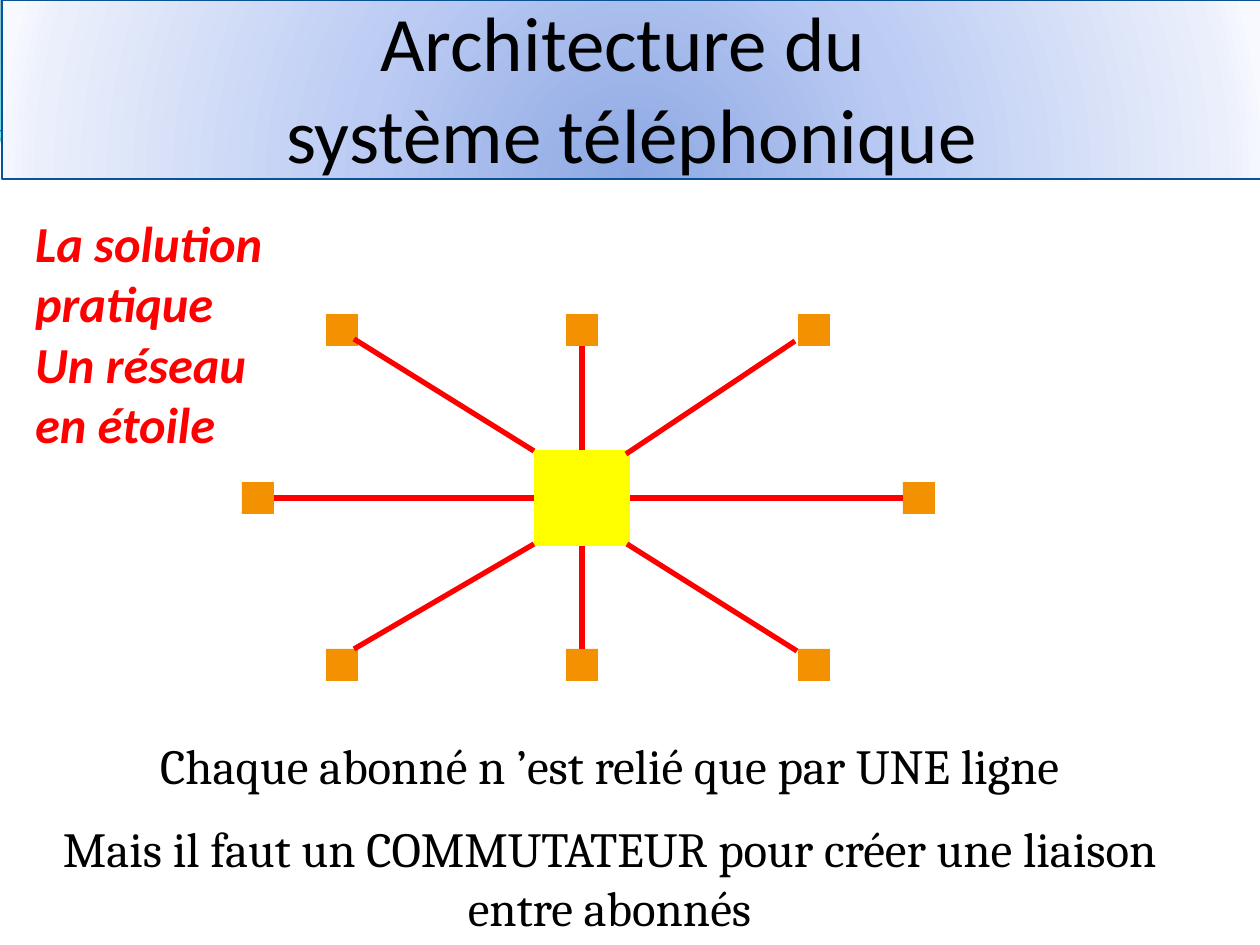
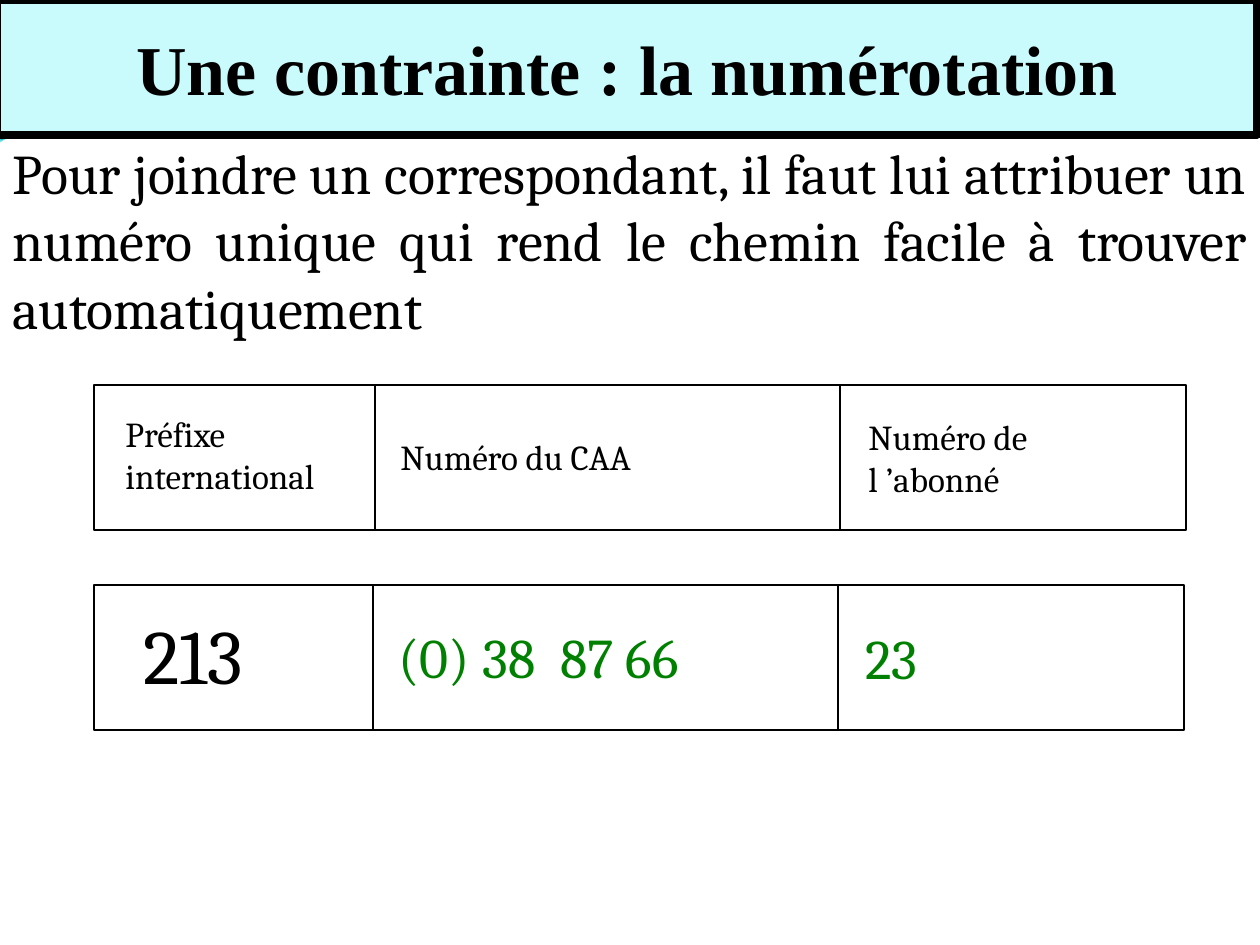
from pptx import Presentation
from pptx import oxml, util as u
from pptx.dml.color import RGBColor
from pptx.enum import shapes, text
from pptx.oxml import ns

PX = 914400 / 126
RECT = shapes.MSO_SHAPE.RECTANGLE
MID, LOW = text.MSO_ANCHOR.MIDDLE, text.MSO_ANCHOR.BOTTOM
LEFT, MIDDLE, JUST = text.PP_ALIGN.LEFT, text.PP_ALIGN.CENTER, text.PP_ALIGN.JUSTIFY
BLACK, RED, ORANGE, YELLOW, GREEN = "000000", "FF0000", "F49100", "FFFF00", "008000"
BODY = "Cambria"

DOWN = '<a:lin ang="5400000" scaled="1"/>'
WAVES = [
    ([(0, "0074A1", 45), (100, "00C6CF", 55)], [
        [(0, 0)],
        [(554, -1)],
        [(600, 21), (837, 79), (955, 79)],
        [(1075, 79), (1207, 33), (1260, 11)],
        [(1261, 45)],
        [(1239, 55), (1096, 96), (940, 95)],
        [(784, 95), (481, 35), (324, 43)],
        [(163, 45), (58, 105), (-1, 142)]]),
    ([(0, "00A1A9", 30), (80, "008BBF", 45)], [
        [(604, -1)],
        [(641, 14), (859, 78), (969, 82)],
        [(1079, 87), (1211, 40), (1260, 26)],
        [(1260, 0)]]),
]
TILT = 357.3
CURVES = [
    ("0AB8BF", 0.85, [
        [(-2, 110)],
        [(59, 90), (199, 52), (350, 53)],
        [(499, 53), (745, 118), (896, 114)],
        [(1049, 109), (1184, 45), (1260, 27)]]),
    ("0F6FC6", 0.75, [
        [(-2, 101)],
        [(57, 94), (207, 57), (357, 58)],
        [(509, 58), (750, 112), (902, 108)],
        [(1052, 104), (1188, 52), (1262, 38)]]),
]

STAR_TITLE = "Architecture du \vsystème téléphonique"
STAR_FILL = [(0, "8DA8E3", 100), (43, "BBCBF3", 100), (93, "EAEFFB", 100), (100, "F7F9FF", 100)]
ROUND = '<a:path path="circle"><a:fillToRect l="50000" t="130000" r="50000" b="-30000"/></a:path>'
STAR_NOTE = "La solution pratique\vUn réseau en étoile"
STAR_TEXT = ["Chaque abonné n\u00a0’est relié que par UNE ligne",
             "Mais il faut un COMMUTATEUR pour créer une liaison entre abonnés"]
HUB = (534, 450, 96, 96)
NODE = 32
CORNERS = [(326, 314), (798, 314), (326, 649), (798, 649)]
SIDES = [(566, 314, 2, 0), (242, 482, 3, 1), (566, 649, 0, 2), (903, 482, 1, 3)]
SPOKES = [(354, 339, 534, 451), (795, 341, 626, 454), (354, 649, 534, 544), (797, 651, 627, 544)]

PLAN_TITLE = "Une contrainte : la numérotation"
PLAN_TEXT = ["Pour joindre un correspondant, il faut lui attribuer un numéro unique "
             "qui rend le chemin facile à trouver automatiquement"]
ROW_LEFT, ROW_TALL = 94, 145
ROWS = [
    (385, 1092, (375, 840), [
        ("Préfixe international", 20, BLACK, 113, 239, 97),
        ("Numéro du CAA", 20, BLACK, 388, 441, 54),
        ("Numéro de l\u00a0’abonné", 20, BLACK, 856, 318, 97)]),
    (585, 1090, (373, 838), [
        ("213", 44, BLACK, 131, 218, 106),
        ("(0) 38  87 66", 32, GREEN, 386, 441, 79),
        ("23", 32, GREEN, 853, 318, 79)]),
]
CELL_MIDS = (69, 71, 72)


def rgb(code):
    return RGBColor.from_string(code)


def emu(*vals):
    return [u.Emu(round(v * PX)) for v in vals]


def paint(shape, fill=None, line=None, wide=0.75):
    shape.shadow.inherit = False
    if fill:
        shape.fill.solid()
        shape.fill.fore_color.rgb = rgb(fill)
    else:
        shape.fill.background()
    if line:
        shape.line.color.rgb = rgb(line)
        shape.line.width = u.Pt(wide)
    else:
        shape.line.fill.background()
    return shape


def blend(shape, stops, shade):
    shape.fill.gradient()
    props = shape._element.spPr
    old = props.find(ns.qn("a:gradFill"))
    marks = "".join(
        f'<a:gs pos="{pos * 1000}"><a:srgbClr val="{code}"><a:alpha val="{alpha * 1000}"/></a:srgbClr></a:gs>'
        for pos, code, alpha in stops)
    props.replace(old, oxml.parse_xml(
        f'<a:gradFill {ns.nsdecls("a")} rotWithShape="1"><a:gsLst>{marks}</a:gsLst>{shade}</a:gradFill>'))


def write(shape, lines, size, color=BLACK, face=BODY, align=LEFT, anchor=MID,
          gap=0, bold=False, slant=False, inset=None):
    frame = shape.text_frame
    frame.word_wrap = True
    frame.vertical_anchor = anchor
    if inset:
        frame.margin_left, frame.margin_top, frame.margin_right, frame.margin_bottom = emu(*inset)
    for i, line in enumerate(lines):
        para = frame.add_paragraph() if i else frame.paragraphs[0]
        para.text = line
        para.alignment = align
        if i:
            para.space_before = u.Pt(gap)
        font = para.font
        font.name, font.size, font.bold, font.italic = face, u.Pt(size), bold, slant
        font.color.rgb = rgb(color)


def box(slide, *area):
    return slide.shapes.add_textbox(*emu(*area))


def rect(slide, area, fill=None, line=None, wide=0.75):
    return paint(slide.shapes.add_shape(RECT, *emu(*area)), fill, line, wide)


def link(slide, ends, color, wide):
    line = slide.shapes.add_connector(shapes.MSO_CONNECTOR.STRAIGHT, *emu(*ends))
    line.line.color.rgb = rgb(color)
    line.line.width = u.Pt(wide)
    line._element.spPr.append(oxml.parse_xml(f'<a:effectLst {ns.nsdecls("a")}/>'))
    return line


def outline(slide, parts, close):
    dots = [part[-1] for part in parts]
    left, top = (min(axis) for axis in zip(*dots))
    form = slide.shapes.build_freeform(*dots[0], scale=PX)
    form.add_line_segments(dots[1:], close=close)
    shape = form.convert_to_shape()
    for step, part in zip(list(shape._element.iter(ns.qn("a:lnTo"))), parts[1:]):
        if len(part) == 3:
            pts = "".join(f'<a:pt x="{x - left}" y="{y - top}"/>' for x, y in part)
            step.getparent().replace(step, oxml.parse_xml(
                f'<a:cubicBezTo {ns.nsdecls("a")}>{pts}</a:cubicBezTo>'))
    return shape


def start(deck):
    slide = deck.slides.add_slide(deck.slide_layouts[6])
    for stops, parts in WAVES:
        blend(paint(outline(slide, parts, True)), stops, DOWN)
    for color, wide, parts in CURVES:
        paint(outline(slide, parts, False), line=color, wide=wide).rotation = TILT
    return slide


def star(deck):
    slide = start(deck)
    write(box(slide, 35, 296, 270, 158), [STAR_NOTE], 28.8, RED, "Calibri",
          anchor=LOW, bold=True, slant=True, inset=(0, 6, 0, 0))
    for x, y in CORNERS:
        rect(slide, (x, y, NODE, NODE), ORANGE)
    nodes = [rect(slide, (x, y, NODE, NODE), ORANGE) for x, y, _, _ in SIDES]
    hub = rect(slide, HUB, YELLOW)
    for node, (_, _, out, into) in zip(nodes, SIDES):
        line = link(slide, (0, 0, 0, 0), RED, 3)
        line.begin_connect(node, out)
        line.end_connect(hub, into)
    for ends in SPOKES:
        link(slide, ends, RED, 3)
    write(box(slide, 44, 726, 1131, 220), STAR_TEXT, 28, align=MIDDLE, gap=14)
    band = rect(slide, (2, 0, 1260, 179), line="095295")
    blend(band, STAR_FILL, ROUND)
    write(band, [STAR_TITLE], 44, face="Calibri", align=MIDDLE, anchor=LOW, inset=(0, 6, 0, 0))


def plan(deck):
    slide = start(deck)
    write(box(slide, 0, 131, 1260, 217), PLAN_TEXT, 32, align=JUST)
    for top, wide, cuts, cells in ROWS:
        rect(slide, (ROW_LEFT, top, wide, ROW_TALL), line=BLACK)
        for x in cuts:
            link(slide, (x, top, x, top + ROW_TALL), BLACK, 0.75)
        for mid, (words, size, color, x, w, h) in zip(CELL_MIDS, cells):
            write(box(slide, x, top + mid - h / 2, w, h), [words], size, color)
    band = rect(slide, (-3, 0, 1260, 135), "C9FAFC", BLACK, 4.5)
    write(band, [PLAN_TITLE], 40, face="Times New Roman", align=MIDDLE, bold=True)


def main():
    deck = Presentation()
    deck.slide_width, deck.slide_height = emu(1260, 945)
    star(deck)
    plan(deck)
    deck.save("out.pptx")


if __name__ == "__main__":
    main()
